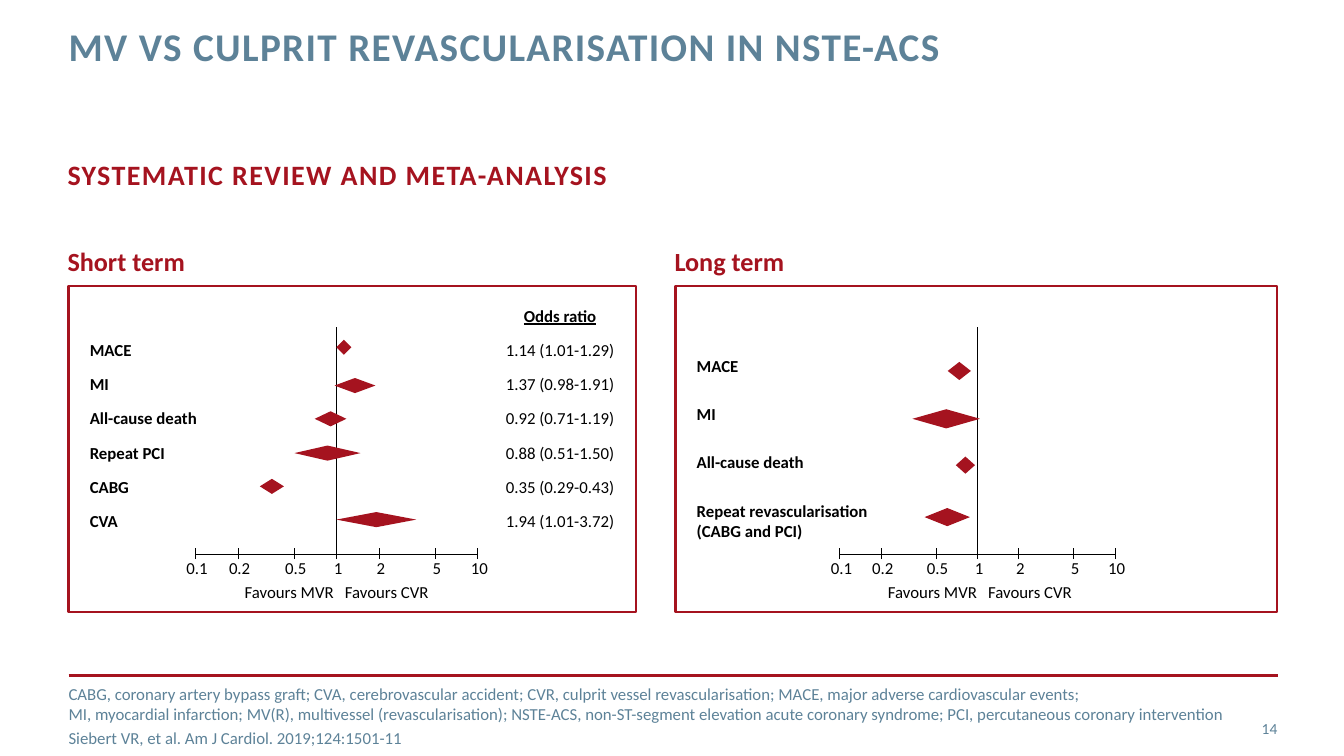
import copy
import math

import pptx
import pptx.dml.color
import pptx.enum.shapes
import pptx.enum.text
import pptx.oxml
import pptx.oxml.ns
import pptx.util

Inches = pptx.util.Inches
Pt = pptx.util.Pt
RGBColor = pptx.dml.color.RGBColor
SHAPE = pptx.enum.shapes.MSO_SHAPE
ALIGN = pptx.enum.text.PP_ALIGN
ANCHOR = pptx.enum.text.MSO_ANCHOR

RED = RGBColor(0xA5, 0x13, 0x1F)
BLUE = RGBColor(0x5D, 0x82, 0x98)
BLACK = RGBColor(0, 0, 0)
WHITE = RGBColor(0xFF, 0xFF, 0xFF)

# Content
TITLE = "MV VS CULPRIT REVASCULARISATION IN NSTE-ACS"
SUBTITLE = "SYSTEMATIC REVIEW AND META-ANALYSIS"
FOOTNOTES = [
    "CABG, coronary artery bypass graft; CVA, cerebrovascular accident; CVR, culprit vessel "
    "revascularisation; MACE, major adverse cardiovascular events;\n"
    "MI, myocardial infarction; MV(R), multivessel (revascularisation); NSTE-ACS, non-ST-segment "
    "elevation acute coronary syndrome; PCI, percutaneous coronary intervention",
    "Siebert VR, et al. Am J Cardiol. 2019;124:1501-11",
]
PAGE_NUMBER = "14"
TICKS = ["0.1", "0.2", "0.5", "1", "2", "5", "10"]

# Outcome, odds ratio, lower limit, upper limit, diamond top
SHORT_TERM = [
    ("MACE", "1.14", "1.01", "1.29", 3.37),
    ("MI", "1.37", "0.98", "1.91", 3.75),
    ("All-cause death", "0.92", "0.71", "1.19", 4.08),
    ("Repeat PCI", "0.88", "0.51", "1.50", 4.42),
    ("CABG", "0.35", "0.29", "0.43", 4.75),
    ("CVA", "1.94", "1.01", "3.72", 5.08),
]
# Outcome, diamond left, top, width, height
LONG_TERM = [
    ("MACE", 9.4, 3.59, 0.23, 0.18),
    ("MI", 9.05, 4.06, 0.67, 0.19),
    ("All-cause death", 9.48, 4.53, 0.19, 0.17),
    ("Repeat revascularisation\n(CABG and PCI)", 9.17, 5.04, 0.45, 0.18),
]
# Heading, frame left, frame width, axis left, inches per decade, left of "Favours MVR"
SHORT_PANEL = ("Short term", 0.68, 5.63, 1.94, 1.4, 2.02)
LONG_PANEL = ("Long term", 6.7, 5.97, 8.33, 1.365, 8.4)
AXIS_Y = 5.5

presentation = pptx.Presentation()
presentation.slide_width = Inches(13.33)
presentation.slide_height = Inches(7.5)
slide = presentation.slides.add_slide(presentation.slide_layouts[3])


def write(text, box, shape=None, size=12, color=BLACK, bold=False, align=ALIGN.LEFT,
          anchor=ANCHOR.TOP, wrap=True, line_spacing=1.0, before=0, after=0,
          letter_spacing=0, fill=None):
    """Write one string or a list of paragraphs into a placeholder or a new text box."""
    left, top, width, height = [Inches(value) for value in box]
    if shape is None:
        shape = slide.shapes.add_textbox(left, top, width, height)
    shape.left, shape.top, shape.width, shape.height = left, top, width, height
    if fill is not None:
        shape.fill.solid()
        shape.fill.fore_color.rgb = fill
    frame = shape.text_frame
    frame.auto_size = pptx.enum.text.MSO_AUTO_SIZE.NONE
    frame.word_wrap = wrap
    frame.vertical_anchor = anchor
    frame.margin_left = frame.margin_right = frame.margin_top = frame.margin_bottom = 0
    lines = [text] if isinstance(text, str) else text
    for index, line in enumerate(lines):
        paragraph = frame.add_paragraph() if index else frame.paragraphs[0]
        paragraph.text = line
        properties = paragraph._p.get_or_add_pPr()
        properties.set("marL", "0")
        properties.set("indent", "0")
        properties.append(pptx.oxml.parse_xml(
            "<a:buNone %s/>" % pptx.oxml.ns.nsdecls("a")))
        paragraph.alignment = align
        paragraph.line_spacing = line_spacing
        paragraph.space_before = Pt(before if index else 0)
        paragraph.space_after = Pt(after)
        for run in paragraph.runs:
            run.font.name = "Calibri"
            run.font.size = Pt(size)
            run.font.bold = bold
            run.font.color.rgb = color
            if letter_spacing:
                run._r.rPr.set("spc", str(letter_spacing * 100))
        for line_break in paragraph._p.findall(pptx.oxml.ns.qn("a:br")):
            line_break.append(copy.deepcopy(paragraph.runs[0]._r.rPr))
    return shape


def add_line(x1, y1, x2, y2, color=BLACK, width=0.75):
    line = slide.shapes.add_connector(
        pptx.enum.shapes.MSO_CONNECTOR.STRAIGHT,
        Inches(x1), Inches(y1), Inches(x2), Inches(y2))
    line.line.color.rgb = color
    line.line.width = Pt(width)
    line._element.spPr.append(pptx.oxml.parse_xml(
        "<a:effectLst %s/>" % pptx.oxml.ns.nsdecls("a")))


def add_shape(kind, left, top, width, height):
    shape = slide.shapes.add_shape(
        kind, Inches(left), Inches(top), Inches(width), Inches(height))
    shape.shadow.inherit = False
    return shape


def add_diamond(left, top, width, height):
    diamond = add_shape(SHAPE.DIAMOND, left, top, width, height)
    diamond.fill.solid()
    diamond.fill.fore_color.rgb = RED
    diamond.line.fill.background()


def odds_x(value, axis_left, decade):
    return axis_left + decade * (math.log10(float(value)) + 1)


def draw_panel(heading, left, width, axis_left, decade, favours_left):
    write(heading, (left - 0.01, 2.43, 1.5, 0.32), size=18.7, color=RED, bold=True, wrap=False)
    frame = add_shape(SHAPE.RECTANGLE, left, 2.84, width, 3.23)
    frame.fill.background()
    frame.line.color.rgb = RED
    frame.line.width = Pt(1.5)

    # Logarithmic axis with a tall line at an odds ratio of 1
    add_line(axis_left, AXIS_Y, axis_left + 2 * decade, AXIS_Y)
    for tick in TICKS:
        x = odds_x(tick, axis_left, decade)
        add_line(x, AXIS_Y + 0.05, x, 3.24 if tick == "1" else AXIS_Y - 0.06)
        write(tick, (x - 0.16, 5.55, 0.35, 0.17), align=ALIGN.CENTER, anchor=ANCHOR.MIDDLE,
              line_spacing=Pt(14.4), fill=WHITE)
    for index, (label, align) in enumerate([("Favours MVR", ALIGN.RIGHT),
                                            ("Favours CVR", ALIGN.LEFT)]):
        write(label, (favours_left + 1.4 * index, 5.79, 1.29, 0.17), align=align,
              anchor=ANCHOR.MIDDLE, line_spacing=Pt(14.4), fill=WHITE)


# Title, subtitle and footer
title, subtitle, footnotes = slide.placeholders
write(TITLE, (0.68, 0.27, 9.56, 0.88), shape=title, size=28, color=BLUE, bold=True,
      line_spacing=Pt(30), letter_spacing=1)
write(SUBTITLE, (0.67, 1.56, 12, 0.77), shape=subtitle, size=20, color=RED, bold=True,
      letter_spacing=1)
add_line(0.68, 6.7, 12.68, 6.7, color=RED, width=2)
write(FOOTNOTES, (0.68, 6.9, 11.66, 0.4), shape=footnotes, color=BLUE,
      anchor=ANCHOR.MIDDLE, before=3)
write(PAGE_NUMBER, (11.81, 7.03, 0.86, 0.4), size=11, color=BLUE, align=ALIGN.RIGHT,
      anchor=ANCHOR.MIDDLE)

# Short-term forest plot: diamonds span the confidence limits
draw_panel(*SHORT_PANEL)
write([row[0] for row in SHORT_TERM], (0.89, 3.23, 1.29, 2.01), bold=True,
      line_spacing=1.7, fill=WHITE)
odds = ["%s (%s-%s)" % row[1:4] for row in SHORT_TERM]
odds_box = write(["Odds ratio"] + odds, (4.91, 2.89, 1.29, 2.36), align=ALIGN.CENTER,
                 line_spacing=1.7)
odds_heading = odds_box.text_frame.paragraphs[0].runs[0]
odds_heading.font.bold = True
odds_heading.font.underline = True
for outcome, ratio, lower, upper, top in SHORT_TERM:
    start, end = [odds_x(limit, *SHORT_PANEL[3:5]) for limit in (lower, upper)]
    add_diamond(start - 0.01, top, end - start, 0.15)

# Long-term forest plot
draw_panel(*LONG_PANEL)
write([row[0] for row in LONG_TERM], (6.91, 3.53, 2.17, 1.85), bold=True, after=20, fill=WHITE)
for outcome, *box in LONG_TERM:
    add_diamond(*box)

presentation.save("out.pptx")
